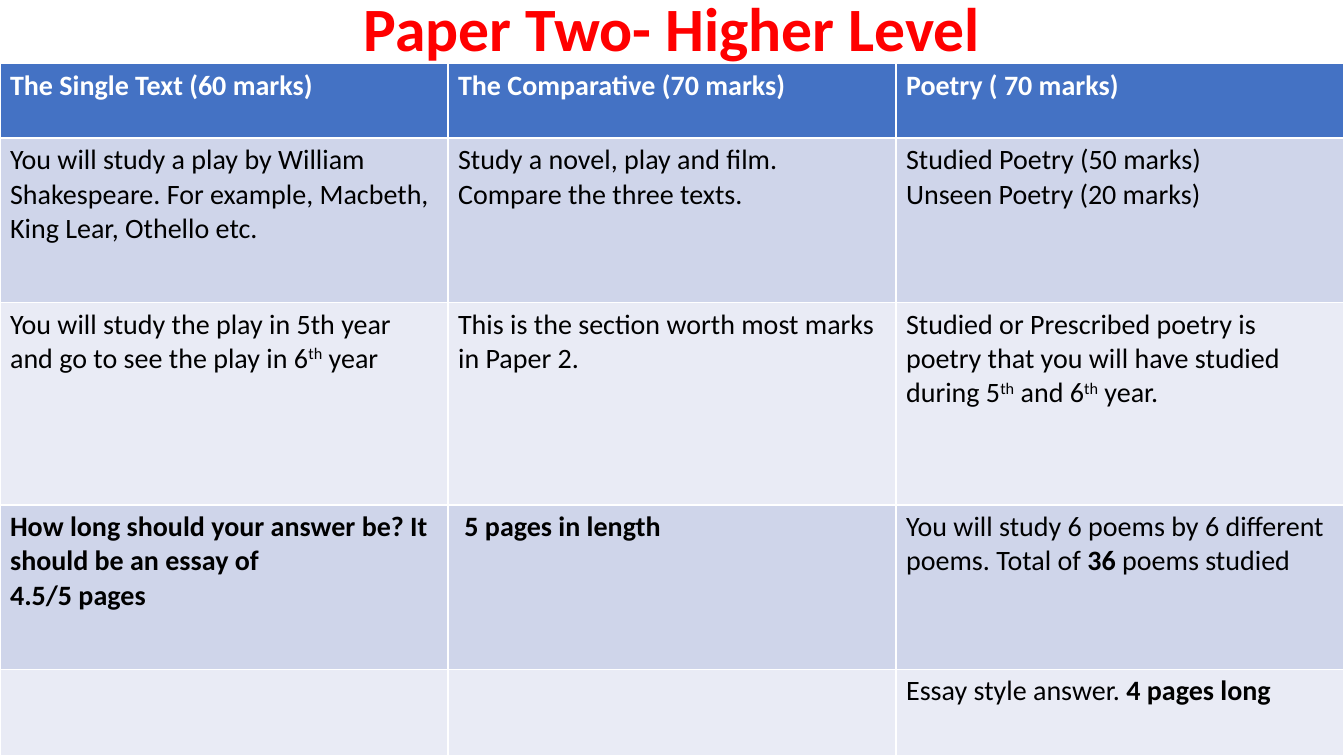
from pptx import Presentation
from pptx.dml.color import RGBColor
from pptx.enum.text import MSO_ANCHOR, PP_ALIGN
from pptx.util import Inches, Pt

RED = RGBColor(0xFF, 0x00, 0x00)
WHITE = RGBColor(0xFF, 0xFF, 0xFF)
BLACK = RGBColor(0x00, 0x00, 0x00)
HEADER_BLUE = RGBColor(0x44, 0x72, 0xC4)
BAND_DARK = RGBColor(0xCF, 0xD5, 0xEA)
BAND_LIGHT = RGBColor(0xE9, 0xEB, 0xF5)

SLIDE_WIDTH, SLIDE_HEIGHT = 13.33, 7.5
ROW_HEIGHTS = [0.74, 1.63, 2.01, 1.63, 0.86]

# A cell is a list of paragraphs, and a paragraph is a list of runs:
# plain text, BOLD text or RAISED text.
BOLD, RAISED = "bold", "raised"
TH = ("th", RAISED)
SECTIONS = [
    [
        [["The Single Text (60 marks)"]],
        [["The Comparative (70 marks)"]],
        [["Poetry ( 70 marks)"]],
    ],
    [
        [["You will study a play by William Shakespeare. "
          "For example, Macbeth, King Lear, Othello etc."]],
        [["Study a novel, play and film. Compare the three texts."]],
        [["Studied Poetry (50 marks)"], ["Unseen Poetry (20 marks)"]],
    ],
    [
        [["You will study the play in 5th year and go to see the play in 6",
          TH, " year"]],
        [["This is the section worth most marks in Paper 2."]],
        [["Studied or Prescribed poetry is poetry that you will have "
          "studied during 5", TH, " and 6", TH, " year."]],
    ],
    [
        [[("How long should your answer be? It should be an essay of", BOLD)],
         [("4.5/5 pages", BOLD)]],
        [[(" 5 pages in length", BOLD)]],
        [["You will study 6 poems by 6 different poems. Total of ",
          ("36", BOLD), " poems studied"]],
    ],
    [
        [],
        [],
        [["Essay style answer. ", ("4 pages long", BOLD)]],
    ],
]


def write_text(frame, paragraphs, size=20, color=BLACK, bold=False,
               align=PP_ALIGN.LEFT, line_spacing=None):
    """Fill a text frame with formatted paragraphs."""
    for index, runs in enumerate(paragraphs):
        paragraph = frame.add_paragraph() if index else frame.paragraphs[0]
        paragraph.alignment = align
        if line_spacing:
            paragraph.line_spacing = line_spacing
        for item in runs:
            words, style = (item, None) if isinstance(item, str) else item
            run = paragraph.add_run()
            run.text = words
            run.font.name = "Calibri"
            run.font.size = Pt(size)
            run.font.bold = bold or style == BOLD
            run.font.color.rgb = color
            if style == RAISED:
                run.font._element.set("baseline", "30000")


def add_heading(slide, left, top, width, height):
    heading = slide.shapes.title
    heading.left, heading.top = Inches(left), Inches(top)
    heading.width, heading.height = Inches(width), Inches(height)
    heading.text_frame.vertical_anchor = MSO_ANCHOR.MIDDLE
    write_text(heading.text_frame, [["Paper Two- Higher Level"]], size=44,
               color=RED, bold=True, align=PP_ALIGN.CENTER, line_spacing=0.9)


def add_sections(slide, left, top, width, height):
    # The default table style supplies the white grid lines
    sections = slide.shapes.add_table(
        len(SECTIONS), len(SECTIONS[0]), Inches(left), Inches(top),
        Inches(width), Inches(height)).table
    for row, row_height in zip(sections.rows, ROW_HEIGHTS):
        row.height = Inches(row_height)

    for row_index, row_content in enumerate(SECTIONS):
        is_header = row_index == 0
        band = BAND_DARK if row_index % 2 else BAND_LIGHT
        for column_index, paragraphs in enumerate(row_content):
            cell = sections.cell(row_index, column_index)
            cell.fill.solid()
            cell.fill.fore_color.rgb = HEADER_BLUE if is_header else band
            write_text(cell.text_frame, paragraphs, bold=is_header,
                       color=WHITE if is_header else BLACK)


def main():
    deck = Presentation()
    deck.slide_width = Inches(SLIDE_WIDTH)
    deck.slide_height = Inches(SLIDE_HEIGHT)
    slide = deck.slides.add_slide(deck.slide_layouts.get_by_name("Title Only"))

    # Heading above the table of exam sections
    add_heading(slide, 0.92, -0.45, 11.5, 1.52)
    table_height = sum(ROW_HEIGHTS)
    add_sections(slide, 0, SLIDE_HEIGHT - table_height, SLIDE_WIDTH,
                 table_height)

    deck.save("out.pptx")


if __name__ == "__main__":
    main()
